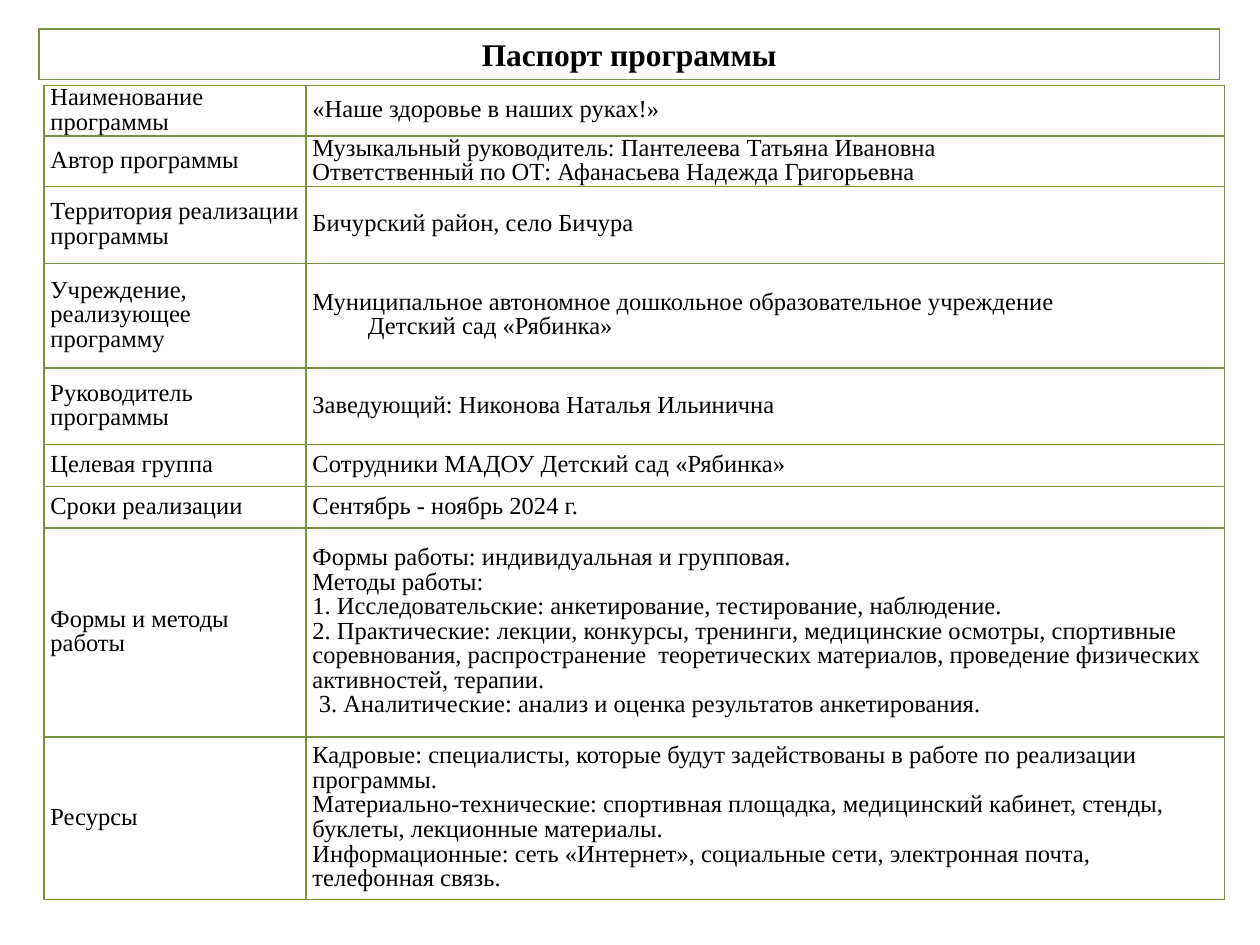
"""Build the programme passport slide: a title bar above a two-column table."""
from lxml.etree import SubElement
from pptx import Presentation
from pptx.dml.color import RGBColor
from pptx.enum.shapes import MSO_SHAPE
from pptx.enum.text import MSO_ANCHOR, PP_ALIGN
from pptx.oxml.ns import qn
from pptx.util import Inches, Pt

COLORS = {"line": "77933C", "fill": "FFFFFF", "text": "000000"}
FONT = "Times New Roman"
TITLE = "Паспорт программы"
WIDTHS = [2.08, 7.29]
ROWS = [
    (0.4, "Наименование программы", ["«Наше здоровье в наших руках!»"]),
    (0.4, "Автор программы", [
        "Музыкальный руководитель: Пантелеева Татьяна Ивановна",
        "Ответственный по ОТ: Афанасьева Надежда Григорьевна"]),
    (0.61, "Территория реализации программы", ["Бичурский район, село Бичура"]),
    (0.83, "Учреждение, реализующее программу", [
        "Муниципальное автономное дошкольное образовательное учреждение",
        "Детский сад «Рябинка»"]),
    (0.61, "Руководитель программы", ["Заведующий: Никонова Наталья Ильинична"]),
    (0.33, "Целевая группа", ["Сотрудники МАДОУ Детский сад «Рябинка»"]),
    (0.33, "Сроки реализации", ["Сентябрь - ноябрь 2024 г."]),
    (1.66, "Формы и методы работы", [
        "Формы работы: индивидуальная и групповая.",
        "Методы работы:",
        "1. Исследовательские: анкетирование, тестирование, наблюдение.",
        "2. Практические: лекции, конкурсы, тренинги, медицинские осмотры, спортивные "
        "соревнования, распространение  теоретических материалов, проведение физических "
        "активностей, терапии.",
        "3. Аналитические: анализ и оценка результатов анкетирования."]),
    (1.29, "Ресурсы", [
        "Кадровые: специалисты, которые будут задействованы в работе по реализации программы.",
        "Материально-технические: спортивная площадка, медицинский кабинет, стенды, "
        "буклеты, лекционные материалы.",
        "Информационные: сеть «Интернет», социальные сети, электронная почта, "
        "телефонная связь."]),
]
INDENTS = {"Детский сад «Рябинка»": 0.44, ROWS[7][2][-1]: 0.05}


def color(name):
    return RGBColor.from_string(COLORS[name])


def style(para, size, bold=False):
    for run in para.runs:
        run.font.name = FONT
        run.font.size = Pt(size)
        run.font.bold = bold
        run.font.color.rgb = color("text")


def border(cell):
    props = cell._tc.get_or_add_tcPr()
    for side in ("lnL", "lnR", "lnT", "lnB"):
        line = SubElement(props, qn(f"a:{side}"), w=str(Pt(1)))
        fill = SubElement(line, qn("a:solidFill"))
        SubElement(fill, qn("a:srgbClr"), val=COLORS["line"])


def write(cell, lines):
    border(cell)
    cell.fill.solid()
    cell.fill.fore_color.rgb = color("fill")
    cell.vertical_anchor = MSO_ANCHOR.MIDDLE
    cell.margin_left = cell.margin_right = Inches(0.05)
    cell.margin_top = cell.margin_bottom = 0
    cell.text_frame.text = "\n".join(lines)
    for para in cell.text_frame.paragraphs:
        para.line_spacing = Pt(14)
        if para.text in INDENTS:
            para._p.get_or_add_pPr().set("marL", str(Inches(INDENTS[para.text])))
        style(para, 14)


def add_grid(slide):
    high = sum(row[0] for row in ROWS)
    table = slide.shapes.add_table(
        len(ROWS), len(WIDTHS), Inches(0.35), Inches(0.68),
        Inches(sum(WIDTHS)), Inches(high)).table
    table.first_row = table.horz_banding = False
    for column, width in zip(table.columns, WIDTHS):
        column.width = Inches(width)
    for row, (height, label, lines) in zip(table.rows, ROWS):
        row.height = Inches(height)
        write(row.cells[0], [label])
        write(row.cells[1], lines)


def add_title(slide):
    bar = slide.shapes.add_shape(
        MSO_SHAPE.RECTANGLE, Inches(0.31), Inches(0.23), Inches(sum(WIDTHS)), Inches(0.4))
    bar.shadow.inherit = False
    bar.fill.solid()
    bar.fill.fore_color.rgb = color("fill")
    bar.line.color.rgb = color("line")
    bar.line.width = Pt(0.75)
    frame = bar.text_frame
    frame.text = TITLE
    frame.word_wrap = True
    frame.vertical_anchor = MSO_ANCHOR.MIDDLE
    para = frame.paragraphs[0]
    para.alignment = PP_ALIGN.CENTER
    style(para, 18, bold=True)


def main():
    deck = Presentation()
    deck.slide_width, deck.slide_height = Inches(10), Inches(7.5)
    slide = deck.slides.add_slide(deck.slide_layouts[6])
    add_grid(slide)
    add_title(slide)
    deck.save("out.pptx")


if __name__ == "__main__":
    main()
